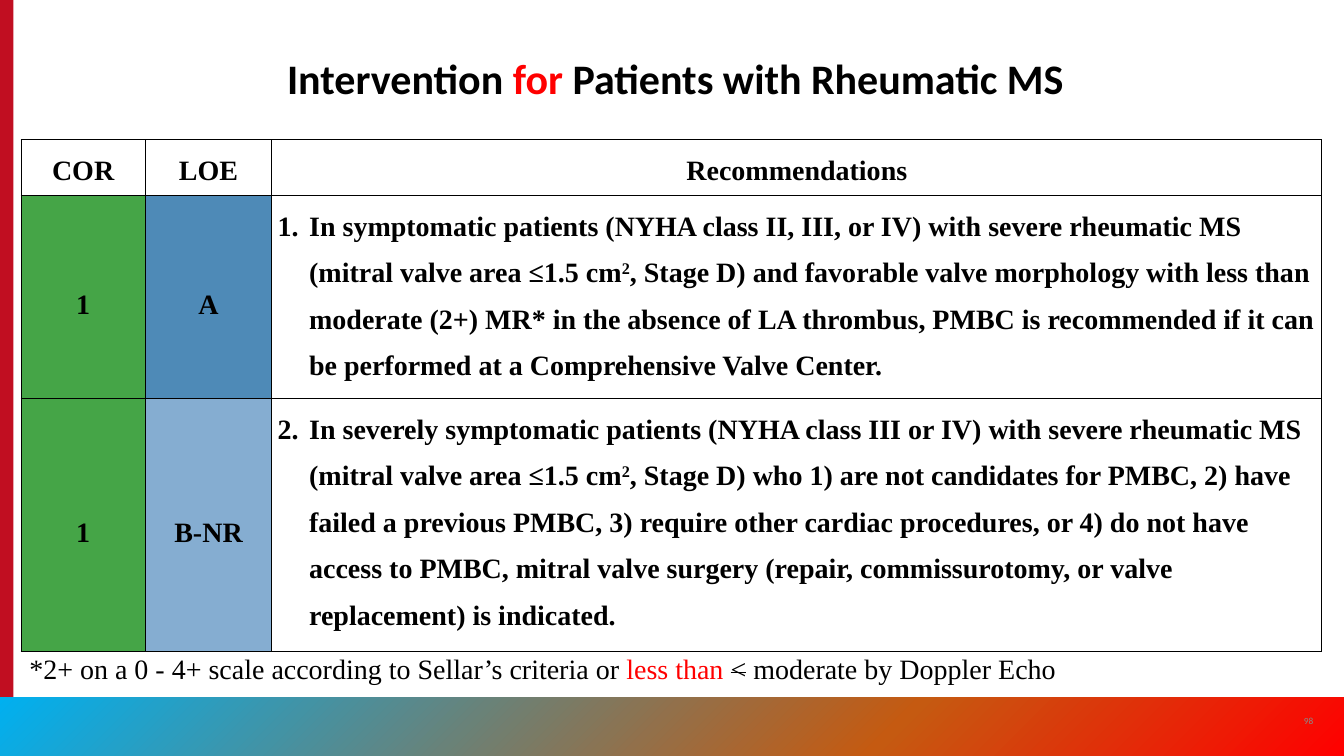
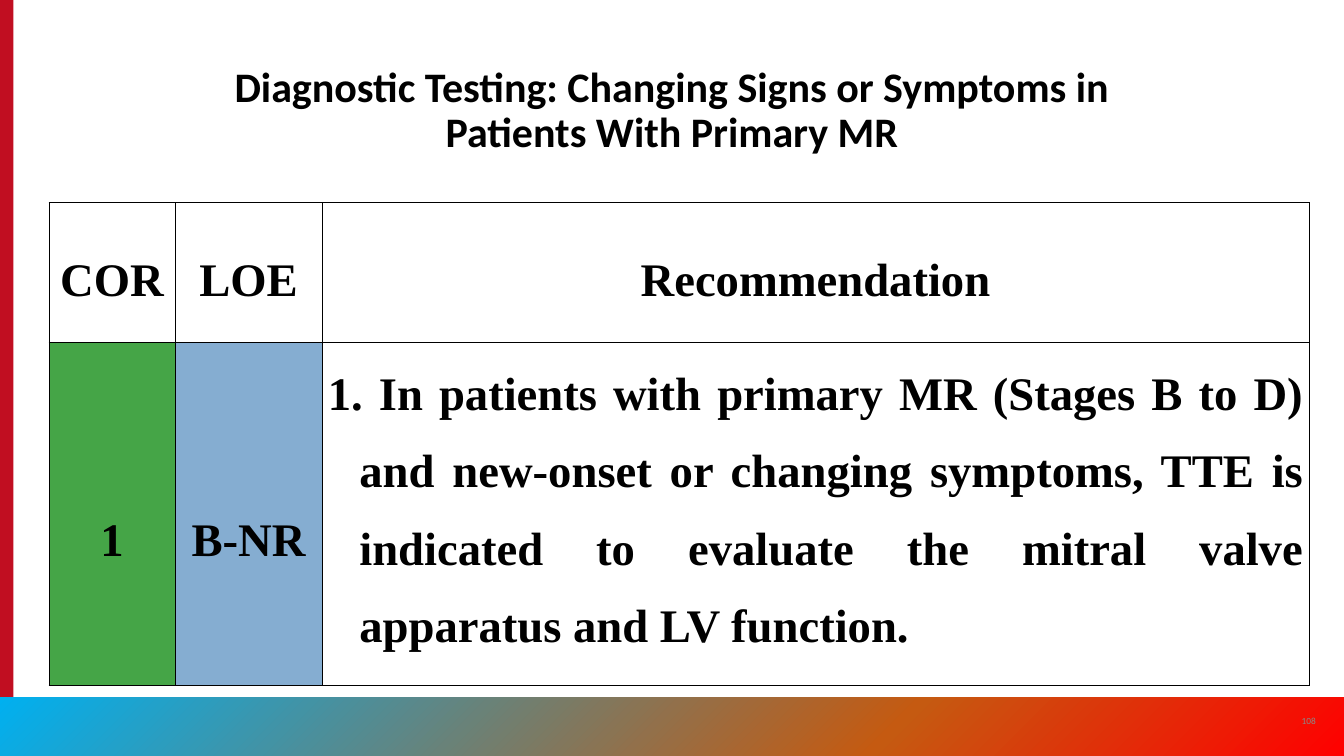
from dataclasses import dataclass
from typing import NamedTuple

import lxml.etree
import pptx
import pptx.dml.color
import pptx.enum.shapes
import pptx.enum.text
import pptx.oxml.ns
import pptx.util

Pt = pptx.util.Pt
Align = pptx.enum.text.PP_ALIGN
Anchor = pptx.enum.text.MSO_ANCHOR
qn = pptx.oxml.ns.qn


@dataclass(frozen=True)
class Theme:
    width: float = 1152
    height: float = 648
    black: str = "000000"
    red: str = "FF0000"
    rail: str = "C10E21"
    grey: str = "8A8B8A"
    class_one: str = "45A547"
    level_a: str = "4E8AB7"
    level_b: str = "85ADD1"
    band_stops: tuple = ((0, "00B0F0"), (66, "C55A11"), (100, "FF0000"))
    heading_font: str = "Calibri"
    body_font: str = "Times New Roman"
    title_size: float = 36
    note_size: float = 24
    page_size: float = 8
    title_spacing: float = 0.9
    cell_margin: float = 5
    number_indent: float = 27
    border: float = 1


THEME = Theme()


class Box(NamedTuple):
    left: float
    top: float
    width: float
    height: float


class Span(NamedTuple):
    text: str
    color: str = THEME.black
    superscript: bool = False
    strike: bool = False


class Face(NamedTuple):
    font: str
    size: float
    bold: bool = False


class Recommendation(NamedTuple):
    cor: str
    loe: str
    loe_color: str
    spans: list[Span]


@dataclass(frozen=True)
class Guideline:
    title: list[Span]
    title_box: Box
    page: str
    left: float
    top: float
    columns: tuple[float, ...]
    rows: tuple[float, ...]
    size: float
    label_spacing: float
    headings: tuple[str, ...]
    recommendations: list[Recommendation]
    align: Align = Align.LEFT
    footnote: tuple[Span, ...] = ()


# Shared helpers
def rgb(value: str) -> pptx.dml.color.RGBColor:
    return pptx.dml.color.RGBColor.from_string(value)


def add_child(parent, tag: str, **attributes: str):
    child = lxml.etree.SubElement(parent, qn(tag))
    for key, value in attributes.items():
        child.set(key, value)
    return child


def write(paragraph, spans, face: Face, align: Align, spacing: float = 1.0) -> None:
    paragraph.alignment = align
    paragraph.line_spacing = spacing
    for span in spans:
        for index, line in enumerate(span.text.split("\n")):
            if index:
                paragraph.add_line_break()
            run = paragraph.add_run()
            run.text = line
            run.font.name = face.font
            run.font.size = Pt(face.size)
            run.font.bold = face.bold
            run.font.color.rgb = rgb(span.color)
            properties = run.font._element
            if span.superscript:
                properties.set("baseline", "30000")
            if span.strike:
                properties.set("strike", "sngStrike")


def add_text(slide, box: Box, spans, face: Face, align: Align, anchor: Anchor,
             spacing: float = 1.0) -> None:
    frame = slide.shapes.add_textbox(*map(Pt, box)).text_frame
    frame.word_wrap = True
    frame.vertical_anchor = anchor
    write(frame.paragraphs[0], spans, face, align, spacing)


def add_block(slide, box: Box):
    block = slide.shapes.add_shape(
        pptx.enum.shapes.MSO_SHAPE.RECTANGLE, *map(Pt, box))
    block.shadow.inherit = False
    block.line.fill.background()
    return block


# Red rail, gradient band and page number
def add_frame(slide, page: str) -> None:
    rail = add_block(slide, Box(0, 0, 11.5, THEME.height))
    rail.fill.solid()
    rail.fill.fore_color.rgb = rgb(THEME.rail)

    band_top = 597.6
    band = add_block(slide, Box(0, band_top, THEME.width, THEME.height - band_top))
    band.fill.gradient()
    band.fill.gradient_angle = 315
    stops = band._element.spPr.find(".//" + qn("a:gsLst"))
    for old_stop in list(stops):
        stops.remove(old_stop)
    for percent, color in THEME.band_stops:
        stop = add_child(stops, "a:gs", pos=str(percent * 1000))
        add_child(stop, "a:srgbClr", val=color)

    add_text(slide, Box(1104.5, 600.5, 34.5, 34.5), [Span(page, THEME.grey)],
             Face(THEME.heading_font, THEME.page_size), Align.CENTER, Anchor.MIDDLE)


# Recommendation table
def number_paragraph(paragraph, number: int) -> None:
    properties = paragraph._p.get_or_add_pPr()
    indent = Pt(THEME.number_indent)
    properties.set("marL", str(indent))
    properties.set("indent", str(-indent))
    add_child(properties, "a:buFont", typeface=THEME.body_font)
    add_child(properties, "a:buAutoNum", type="arabicPeriod", startAt=str(number))


def style_cell(cell, color: str | None, anchor: Anchor) -> None:
    cell.margin_left = cell.margin_right = Pt(THEME.cell_margin)
    cell.margin_top = cell.margin_bottom = 0
    cell.vertical_anchor = anchor
    properties = cell._tc.get_or_add_tcPr()
    for side in ("a:lnL", "a:lnR", "a:lnT", "a:lnB"):
        line = add_child(properties, side, w=str(Pt(THEME.border)))
        add_child(add_child(line, "a:solidFill"), "a:srgbClr", val=THEME.black)
    if color:
        cell.fill.solid()
        cell.fill.fore_color.rgb = rgb(color)
    else:
        cell.fill.background()


def add_recommendations(slide, guideline: Guideline) -> None:
    columns, rows = guideline.columns, guideline.rows
    box = Box(guideline.left, guideline.top, sum(columns), sum(rows))
    table = slide.shapes.add_table(len(rows), len(columns), *map(Pt, box)).table
    table.first_row = table.horz_banding = False
    for column, width in zip(table.columns, columns):
        column.width = Pt(width)
    for row, height in zip(table.rows, rows):
        row.height = Pt(height)
    face = Face(THEME.body_font, guideline.size, bold=True)

    def label(row: int, column: int, text: str, color: str | None, anchor: Anchor) -> None:
        cell = table.cell(row, column)
        style_cell(cell, color, anchor)
        write(cell.text_frame.paragraphs[0], [Span(text)], face, Align.CENTER,
              guideline.label_spacing)

    for column, heading in enumerate(guideline.headings):
        label(0, column, heading, None, Anchor.TOP)
    for number, item in enumerate(guideline.recommendations, start=1):
        label(number, 0, item.cor, THEME.class_one, Anchor.MIDDLE)
        label(number, 1, item.loe, item.loe_color, Anchor.MIDDLE)
        advice = table.cell(number, 2)
        style_cell(advice, None, Anchor.TOP)
        paragraph = advice.text_frame.paragraphs[0]
        number_paragraph(paragraph, number)
        write(paragraph, item.spans, face, guideline.align, 1.5)


def add_guideline(deck, guideline: Guideline) -> None:
    slide = deck.slides.add_slide(deck.slide_layouts[6])
    add_frame(slide, guideline.page)
    add_text(slide, guideline.title_box, guideline.title,
             Face(THEME.heading_font, THEME.title_size, bold=True),
             Align.CENTER, Anchor.BOTTOM, THEME.title_spacing)
    add_recommendations(slide, guideline)
    if guideline.footnote:
        add_text(slide, Box(18, 555, 918, 36), guideline.footnote,
                 Face(THEME.body_font, THEME.note_size), Align.JUSTIFY, Anchor.MIDDLE)


# Content
SQUARED = Span("2", superscript=True)

GUIDELINES = [
    Guideline(
        title=[Span("Intervention "), Span("for", THEME.red),
               Span(" Patients with Rheumatic MS")],
        title_box=Box(162, 30, 834, 62),
        page="98",
        left=18, top=120,
        columns=(106.5, 108.5, 900),
        rows=(48, 174, 205),
        size=24, label_spacing=1.5,
        headings=("COR", "LOE", "Recommendations"),
        recommendations=[
            Recommendation("1", "A", THEME.level_a, [
                Span("In symptomatic patients (NYHA class II, III, or IV) with severe "
                     "rheumatic MS (mitral valve area ≤1.5 cm"),
                SQUARED,
                Span(", Stage D) and favorable valve morphology with less than moderate "
                     "(2+) MR* in the absence of LA thrombus, PMBC is recommended if it "
                     "can be performed at a Comprehensive Valve Center."),
            ]),
            Recommendation("1", "B-NR", THEME.level_b, [
                Span("In severely symptomatic patients (NYHA class III or IV) with severe "
                     "rheumatic MS (mitral valve area ≤1.5 cm"),
                SQUARED,
                Span(", Stage D) who 1) are not candidates for PMBC, 2) have failed a "
                     "previous PMBC, 3) require other cardiac procedures, or 4) do not "
                     "have access to PMBC, mitral valve surgery (repair, commissurotomy, "
                     "or valve replacement) is indicated."),
            ]),
        ],
        footnote=(
            Span("*2+ on a 0 - 4+ scale according to Sellar’s criteria or "),
            Span("less than ", THEME.red),
            Span("<", strike=True),
            Span(" moderate by Doppler Echo"),
        ),
    ),
    Guideline(
        title=[Span("Diagnostic Testing: Changing Signs or Symptoms in Patients With "
                    "Primary MR")],
        title_box=Box(159, 45, 834, 93),
        page="108",
        left=42, top=174,
        columns=(108, 126, 846),
        rows=(120, 294),
        size=40, label_spacing=2.0,
        headings=("COR", "LOE", "Recommendation"),
        recommendations=[
            Recommendation("1", "B-NR", THEME.level_b, [
                Span(" In patients with primary MR (Stages B to D)\nand new-onset or "
                     "changing symptoms, TTE is indicated to evaluate the mitral valve "
                     "apparatus and LV function."),
            ]),
        ],
        align=Align.JUSTIFY,
    ),
]


def main() -> None:
    deck = pptx.Presentation()
    deck.slide_width = Pt(THEME.width)
    deck.slide_height = Pt(THEME.height)
    for guideline in GUIDELINES:
        add_guideline(deck, guideline)
    deck.save("out.pptx")


if __name__ == "__main__":
    main()
